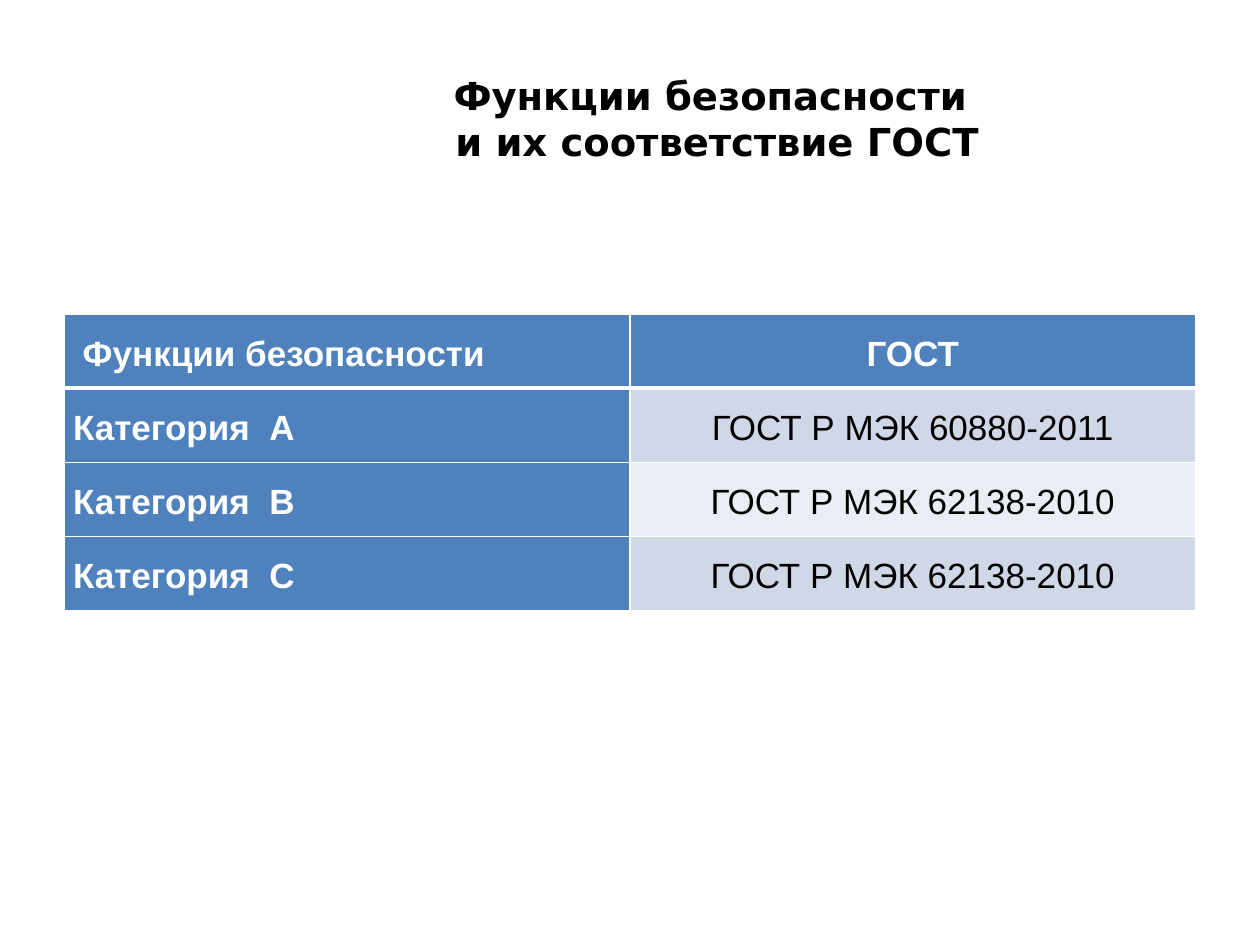
from lxml import etree
from pptx import Presentation
from pptx.dml.color import RGBColor
from pptx.enum.text import MSO_ANCHOR, PP_ALIGN
from pptx.oxml.ns import qn
from pptx.util import Inches, Pt

LEFT, CENTER = PP_ALIGN.LEFT, PP_ALIGN.CENTER
MIDDLE = MSO_ANCHOR.MIDDLE

BLACK = RGBColor(0x00, 0x00, 0x00)
WHITE = RGBColor(0xFF, 0xFF, 0xFF)
BLUE = RGBColor(0x4F, 0x81, 0xBD)
BANDS = (RGBColor(0xD0, 0xD8, 0xE8), RGBColor(0xE9, 0xED, 0xF4))

TITLE_FONT = {"name": "DejaVu Sans", "size": Pt(22), "bold": True}
HEADING_FONT = {"name": "Arial", "size": Pt(20), "bold": True}
BODY_FONT = {**HEADING_FONT, "bold": False}
CELL_FORMAT = {
    "vertical_anchor": MIDDLE,
    "margin_left": Inches(0.07),
    "margin_right": Inches(0.07),
    "margin_top": 0,
    "margin_bottom": 0,
}

TITLE_LINES = ("Функции безопасности ", "и их соответствие ГОСТ")
ROWS = (
    (" Функции безопасности", "ГОСТ"),
    ("Категория  А", "ГОСТ Р МЭК 60880-2011"),
    ("Категория  В", "ГОСТ Р МЭК 62138-2010"),
    ("Категория  С", "ГОСТ Р МЭК 62138-2010"),
)
ROW_HEIGHT, COLUMN_WIDTH = 0.59, 4.49


def apply_format(target, values):
    for name, value in values.items():
        setattr(target, name, value)


def set_font(font, values, color):
    apply_format(font, values)
    font.color.rgb = color


def add_title(slide):
    box = slide.shapes.add_textbox(Inches(1.44), Inches(0.3), Inches(8.5), Inches(1.28))
    frame = box.text_frame
    apply_format(frame, {"word_wrap": True, "vertical_anchor": MIDDLE})
    para = frame.paragraphs[0]
    para.alignment = CENTER
    para.text = "\v".join(TITLE_LINES)
    set_font(para.font, TITLE_FONT, BLACK)


def set_borders(cell, widths):
    """Draw white cell borders, with widths in points keyed by side."""
    properties = cell._tc.get_or_add_tcPr()
    for index, (side, width) in enumerate(widths.items()):
        line = etree.Element(qn(f"a:ln{side}"), w=str(Pt(width)))
        fill = etree.SubElement(line, qn("a:solidFill"))
        etree.SubElement(fill, qn("a:srgbClr"), val=str(WHITE))
        properties.insert(index, line)


def fill_cell(cell, text, row, column):
    is_heading = row == 0 or column == 0
    apply_format(cell, CELL_FORMAT)
    cell.fill.solid()
    cell.fill.fore_color.rgb = BLUE if is_heading else BANDS[(row - 1) % 2]
    set_borders(cell, {"L": 1, "R": 1, "T": 3 if row == 1 else 1, "B": 3 if row == 0 else 1})

    para = cell.text_frame.paragraphs[0]
    para.text = text
    apply_format(para, {"alignment": CENTER if column else LEFT, "line_spacing": 1.15})
    span = para.runs[0]
    if is_heading:
        set_font(span.font, HEADING_FONT, WHITE)
    else:
        set_font(span.font, BODY_FONT, BLACK)


def add_standards_table(slide):
    row_count, column_count = len(ROWS), len(ROWS[0])
    table = slide.shapes.add_table(
        row_count, column_count, Inches(0.51), Inches(2.49),
        Inches(COLUMN_WIDTH * column_count), Inches(ROW_HEIGHT * row_count),
    ).table
    for row, texts in enumerate(ROWS):
        for column, text in enumerate(texts):
            fill_cell(table.cell(row, column), text, row, column)


def main():
    deck = Presentation()
    deck.slide_width, deck.slide_height = Inches(10), Inches(7.5)
    page = deck.slides.add_slide(deck.slide_layouts[6])
    add_title(page)
    add_standards_table(page)
    deck.save("out.pptx")


if __name__ == "__main__":
    main()
